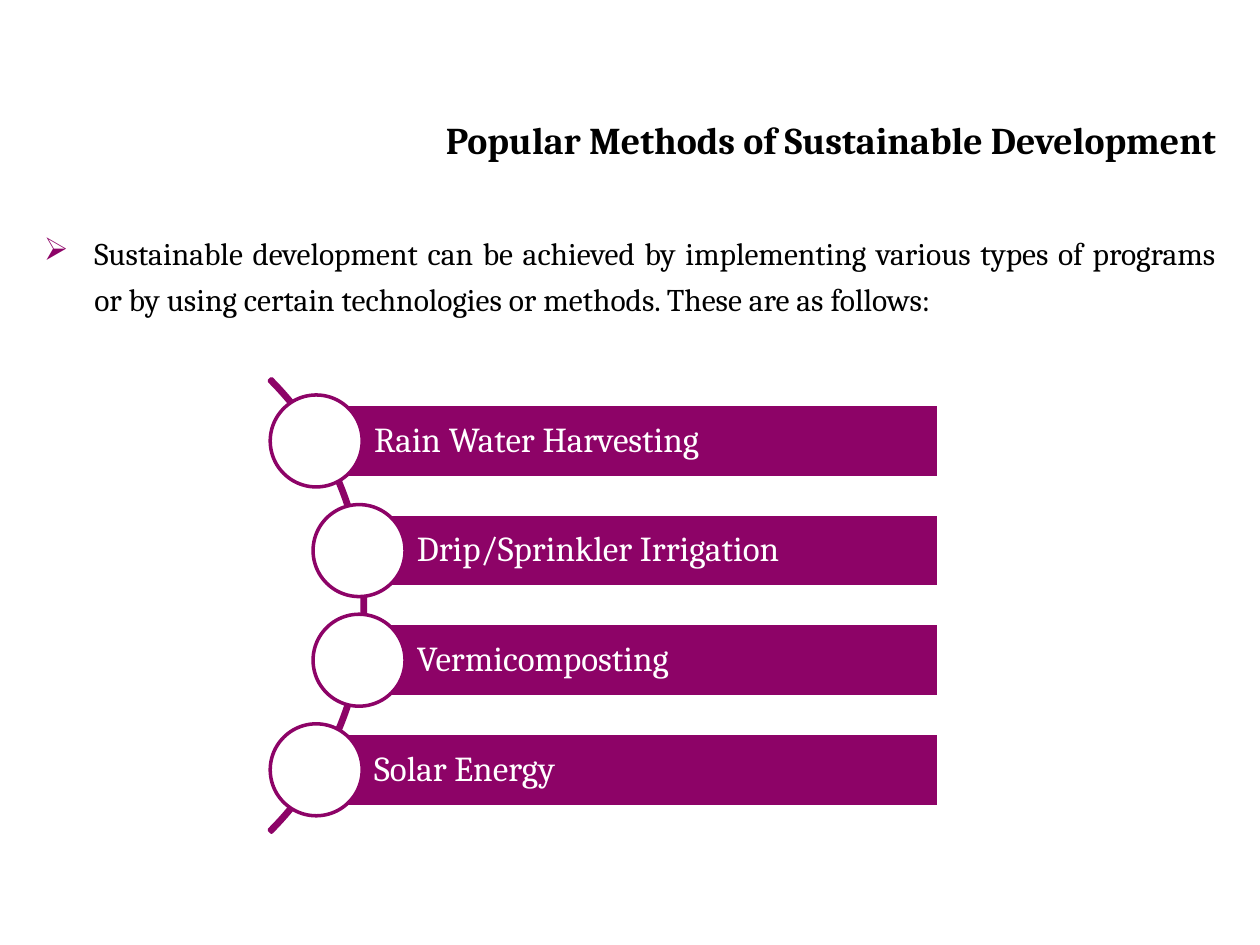
from lxml.etree import SubElement
from pptx import Presentation
from pptx.dml.color import RGBColor
from pptx.enum.shapes import MSO_SHAPE
from pptx.enum.text import MSO_ANCHOR, PP_ALIGN
from pptx.oxml.ns import qn
from pptx.util import Inches, Pt

COLORS = {"plum": "8D0367", "white": "FFFFFF", "black": "000000"}


def rgb(name):
    return RGBColor.from_string(COLORS[name])


def write_text(shape, text, size=20, color="black", bold=False, align=PP_ALIGN.LEFT,
               anchor=MSO_ANCHOR.MIDDLE, insets=(0.1, 0.05, 0.1, 0.05),
               line_spacing=1.0, bullet=None, indent=0.4):
    frame = shape.text_frame
    frame.word_wrap = True
    frame.vertical_anchor = anchor
    (frame.margin_left, frame.margin_top,
     frame.margin_right, frame.margin_bottom) = [Inches(inset) for inset in insets]
    paragraph = frame.paragraphs[0]
    paragraph.text = text
    paragraph.alignment = align
    paragraph.line_spacing = line_spacing
    if bullet:
        properties = paragraph._p.get_or_add_pPr()
        properties.set("marL", str(Inches(indent)))
        properties.set("indent", str(-Inches(indent)))
        bullet_color = SubElement(properties, qn("a:buClr"))
        SubElement(bullet_color, qn("a:srgbClr"), val=COLORS["plum"])
        SubElement(properties, qn("a:buChar"), char=bullet)
    font = paragraph.runs[0].font
    font.name = "Cambria"
    font.size = Pt(size)
    font.bold = bold
    font.color.rgb = rgb(color)


presentation = Presentation()
presentation.slide_width = Inches(10)
presentation.slide_height = Inches(7.5)
slide = presentation.slides.add_slide(presentation.slide_layouts[6])
shapes = slide.shapes

title = shapes.add_textbox(Inches(1.67), Inches(0.73), Inches(8.08), Inches(0.75))
write_text(title, "Popular Methods of Sustainable Development",
           size=21.6, bold=True, align=PP_ALIGN.RIGHT)

intro = shapes.add_textbox(Inches(0.25), Inches(1.75), Inches(9.5), Inches(1))
write_text(intro, "Sustainable development can be achieved by implementing various types of "
           "programs or by using certain technologies or methods. These are as follows:",
           size=18, align=PP_ALIGN.JUSTIFY, anchor=MSO_ANCHOR.TOP,
           line_spacing=1.2, bullet="➢")

arc = shapes.add_shape(MSO_SHAPE.BLOCK_ARC, Inches(-2.19), Inches(2.26),
                       Inches(5.09), Inches(5.09))
arc.shadow.inherit = False
arc.adjustments[0] = 189
arc.adjustments[1] = 27
arc.adjustments[2] = 0.005
arc.fill.background()
arc.line.color.rgb = rgb("plum")
arc.line.width = Pt(2)

# Each method: its name and the x where its bar starts, at the circle's centre
methods = [
    ("Rain Water Harvesting", 2.51),
    ("Drip/Sprinkler Irrigation", 2.85),
    ("Vermicomposting", 2.85),
    ("Solar Energy", 2.51),
]
first_center, row_pitch = 3.5, 0.87
bar_right, bar_height, circle_size = 7.45, 0.58, 0.73

for row, (method, center_x) in enumerate(methods):
    center_y = first_center + row * row_pitch
    bar = shapes.add_shape(MSO_SHAPE.RECTANGLE, Inches(center_x),
                           Inches(center_y - bar_height / 2),
                           Inches(bar_right - center_x), Inches(bar_height))
    circle = shapes.add_shape(MSO_SHAPE.OVAL, Inches(center_x - circle_size / 2),
                              Inches(center_y - circle_size / 2),
                              Inches(circle_size), Inches(circle_size))
    for part, fill, outline in ((bar, "plum", "white"), (circle, "white", "plum")):
        part.shadow.inherit = False
        part.fill.solid()
        part.fill.fore_color.rgb = rgb(fill)
        part.line.color.rgb = rgb(outline)
        part.line.width = Pt(2)
    write_text(bar, method, color="white", line_spacing=0.9,
               insets=(0.46, 0.06, 0.06, 0.06))

presentation.save("out.pptx")
